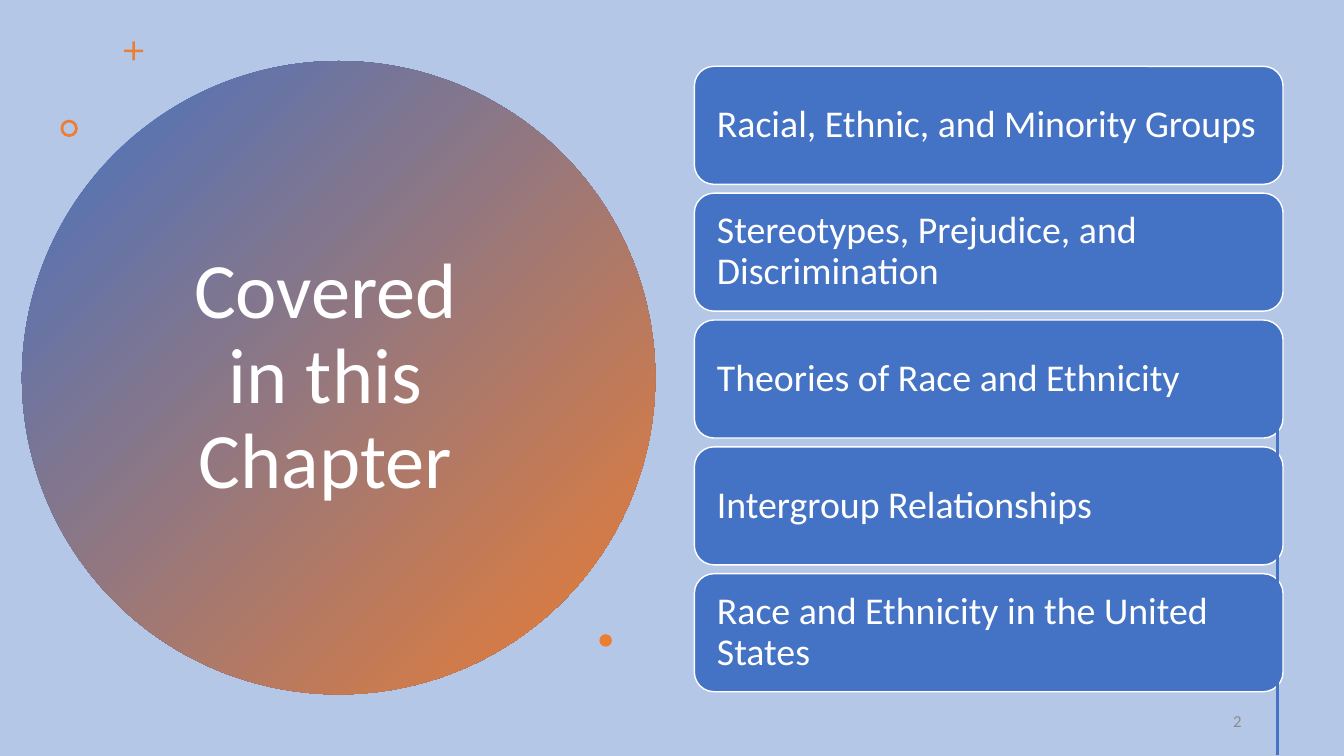
from pptx import Presentation
from pptx.dml.color import RGBColor
from pptx.enum.shapes import MSO_CONNECTOR, MSO_SHAPE as Shape
from pptx.enum.text import MSO_ANCHOR as Anchor, MSO_AUTO_SIZE, PP_ALIGN as Align
from pptx.oxml.ns import qn
from pptx.util import Pt
from lxml import etree

# Content
TITLE = "Covered in this Chapter"
TOPICS = [
    "Racial, Ethnic, and Minority Groups",
    "Stereotypes, Prejudice, and Discrimination",
    "Theories of Race and Ethnicity",
    "Intergroup Relationships",
    "Race and Ethnicity in the United States",
]
PAGE_NUMBER = "2"

# Style
FONT = "Calibri"
COLORS = {"background": "B4C7E7", "blue": "4472C4", "orange": "ED7D31",
          "white": "FFFFFF", "gray": "8C8C8C"}

# Layout in points: left, top, width, height
CIRCLE = (15.7, 43.6, 452.4, 452.4)
TITLE_BOX = (104.4, 141.8, 256.3, 256.3)
FIRST_CARD = (496, 47.4, 420.5, 84.3)
CARD_PITCH = 90.6
CARD_INSET = 12
NUMBER_BOX = (678, 500.5, 216, 28.8)
LINE_X, LINE_TOP, LINE_BOTTOM = 912.3, 284.4, 539.3
ORNAMENTS = [  # preset, box, adjustment
    (Shape.CROSS, (88.6, 29.5, 13.7, 13.7), 0.43),
    (Shape.DONUT, (43.2, 85.5, 12.4, 12.4), 0.16),
    (Shape.OVAL, (428.2, 453, 8.9, 8.9), None),
]


def color(name):
    return RGBColor.from_string(COLORS[name])


def points(values):
    return [Pt(value) for value in values]


def add_shape(slide, preset, box, fill=None):
    shape = slide.shapes.add_shape(preset, *points(box))
    shape.shadow.inherit = False
    shape.line.fill.background()
    if fill:
        shape.fill.solid()
        shape.fill.fore_color.rgb = color(fill)
    return shape


def write(shape, text, size, color_name, align, spacing=None):
    frame = shape.text_frame
    frame.word_wrap = True
    frame.auto_size = MSO_AUTO_SIZE.NONE
    frame.vertical_anchor = Anchor.MIDDLE
    paragraph = frame.paragraphs[0]
    paragraph.alignment = align
    paragraph.line_spacing = spacing
    run = paragraph.add_run()
    run.text = text
    run.font.name = FONT
    run.font.size = Pt(size)
    run.font.color.rgb = color(color_name)


def main():
    presentation = Presentation()
    presentation.slide_width, presentation.slide_height = Pt(960), Pt(540)
    slide = presentation.slides.add_slide(presentation.slide_layouts[5])
    slide.background.fill.solid()
    slide.background.fill.fore_color.rgb = color("background")

    # Gradient circle
    circle = add_shape(slide, Shape.OVAL, CIRCLE)
    circle.fill.gradient()
    circle.fill.gradient_angle = 315
    for stop, position, name in zip(circle.fill.gradient_stops, (0, 1), ("blue", "orange")):
        stop.position = position
        stop.color.rgb = color(name)

    # Title, in front of the circle
    title = slide.shapes.title
    title.left, title.top, title.width, title.height = points(TITLE_BOX)
    write(title, TITLE, 56, "white", Align.CENTER, 0.9)
    circle._element.addnext(title._element)

    # Small ornaments
    for preset, box, adjustment in ORNAMENTS:
        ornament = add_shape(slide, preset, box, "orange")
        if adjustment is not None:
            ornament.adjustments[0] = adjustment

    # Topic cards
    left, top, width, height = FIRST_CARD
    for index, topic in enumerate(TOPICS):
        card = add_shape(slide, Shape.ROUNDED_RECTANGLE,
                         (left, top + index * CARD_PITCH, width, height), "blue")
        card.line.color.rgb = color("white")
        card.line.width = Pt(1)
        card.text_frame.margin_left = card.text_frame.margin_right = Pt(CARD_INSET)
        write(card, topic, 27, "white", Align.LEFT, 0.9)

    # Vertical line
    line = slide.shapes.add_connector(
        MSO_CONNECTOR.STRAIGHT, *points((LINE_X, LINE_TOP, LINE_X, LINE_BOTTOM)))
    line.line.color.rgb = color("blue")
    line.line.width = Pt(2)
    etree.SubElement(line._element.spPr, qn("a:effectLst"))

    # Page number
    number = slide.shapes.add_textbox(*points(NUMBER_BOX))
    write(number, PAGE_NUMBER, 12, "gray", Align.RIGHT)

    presentation.save("out.pptx")


if __name__ == "__main__":
    main()
